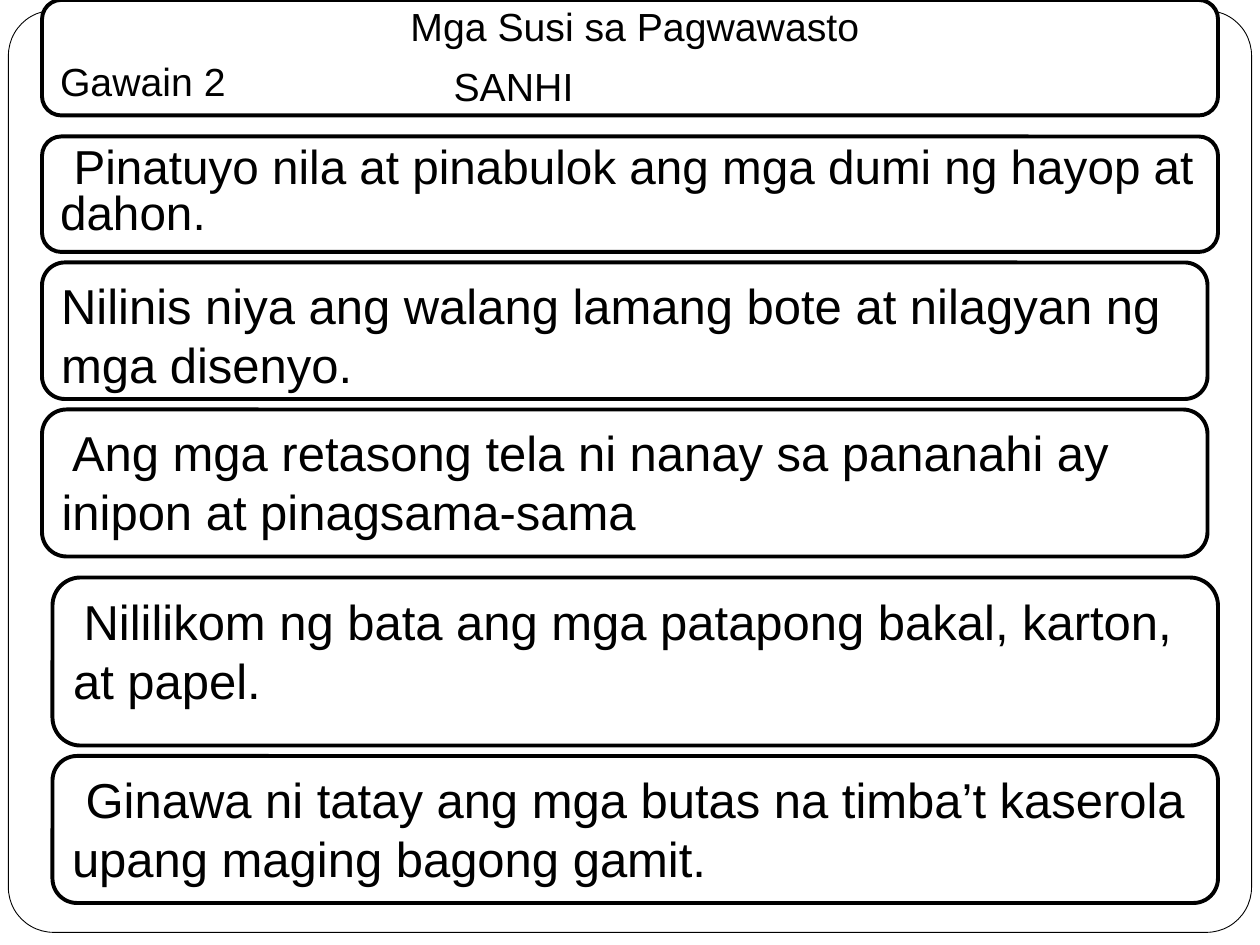
"""Builds the answer key slide with its stack of rounded cards."""
from dataclasses import dataclass

from pptx import Presentation
from pptx.dml.color import RGBColor
from pptx.enum.shapes import MSO_SHAPE
from pptx.enum.text import MSO_ANCHOR, PP_ALIGN
from pptx.util import Emu, Pt

PX = 7620
BLACK = "000000"
WHITE = "FFFFFF"
HEADER_SIZE = 22.4


@dataclass(frozen=True)
class Card:
    """One bordered card: place in px, wording and type settings."""
    left: int
    top: int
    width: int
    height: int
    text: str
    indent: int = 0
    size: float = 28
    spacing: float = 1.0


CARDS = [
    Card(40, 130, 1120, 110, "Pinatuyo nila at pinabulok ang mga dumi ng hayop at dahon.",
         13, 27.2, 0.8),
    Card(40, 250, 1110, 130, "Nilinis niya ang walang lamang bote at nilagyan ng mga disenyo."),
    Card(40, 390, 1110, 140,
         "Ang mga retasong tela ni nanay sa pananahi ay inipon at pinagsama-sama", 10),
    Card(50, 550, 1110, 160, "Nililikom ng bata ang mga patapong bakal, karton, at papel.", 10),
    Card(50, 720, 1110, 140,
         "Ginawa ni tatay ang mga butas na timba’t kaserola upang maging bagong gamit.", 13),
]
HEADER = Card(40, 0, 1120, 110, "Mga Susi sa Pagwawasto\nGawain 2", 0, HEADER_SIZE, 0.8)


def px(length: int) -> Emu:
    """Turn whole px into EMU."""
    return Emu(length * PX)


def color(value: str) -> RGBColor:
    """Turn a hex string into a colour."""
    return RGBColor.from_string(value)


def add_panel(page, left: int, top: int, width: int, height: int, corner: float, line: float):
    """Add a white rounded rectangle with a black outline."""
    panel = page.shapes.add_shape(
        MSO_SHAPE.ROUNDED_RECTANGLE, px(left), px(top), px(width), px(height))
    panel.shadow.inherit = False
    panel.adjustments[0] = corner
    panel.fill.solid()
    panel.fill.fore_color.rgb = color(WHITE)
    panel.line.color.rgb = color(BLACK)
    panel.line.width = Pt(line)
    return panel


def write(frame, text: str, size: float, spacing: float) -> None:
    """Fill a text frame with left-aligned black text from the top."""
    frame.text = text
    frame.word_wrap = True
    frame.vertical_anchor = MSO_ANCHOR.TOP
    for para in frame.paragraphs:
        para.alignment = PP_ALIGN.LEFT
        para.line_spacing = spacing
        para.space_after = Pt(10)
        for span in para.runs:
            span.font.name = "Arial"
            span.font.size = Pt(size)
            span.font.color.rgb = color(BLACK)


def indent_first_line(para, indent: int) -> None:
    """Indent the first line of a paragraph."""
    para._p.get_or_add_pPr().set("indent", str(px(indent)))


def add_card(page, card: Card):
    """Add a card with its text and return its text frame."""
    box = add_panel(page, card.left, card.top, card.width, card.height, 0.167, 2.25)
    write(box.text_frame, card.text, card.size, card.spacing)
    indent_first_line(box.text_frame.paragraphs[0], card.indent)
    return box.text_frame


def add_label(page, left: int, top: int, width: int, height: int, text: str, size: float) -> None:
    """Add a text box without margins."""
    frame = page.shapes.add_textbox(px(left), px(top), px(width), px(height)).text_frame
    frame.margin_left = frame.margin_right = frame.margin_top = frame.margin_bottom = 0
    write(frame, text, size, 1.0)


def main() -> None:
    """Build and save the deck."""
    deck = Presentation()
    deck.slide_width, deck.slide_height = px(1200), px(900)
    page = deck.slides.add_slide(deck.slide_layouts[6])
    add_panel(page, 8, 10, 1184, 878, 0.049, 0.5)
    for card in CARDS:
        add_card(page, card)
    title = add_card(page, HEADER).paragraphs[0]
    title.alignment = PP_ALIGN.CENTER
    indent_first_line(title, 10)
    add_label(page, 432, 59, 140, 44, "SANHI", HEADER_SIZE)
    deck.save("out.pptx")


if __name__ == "__main__":
    main()
